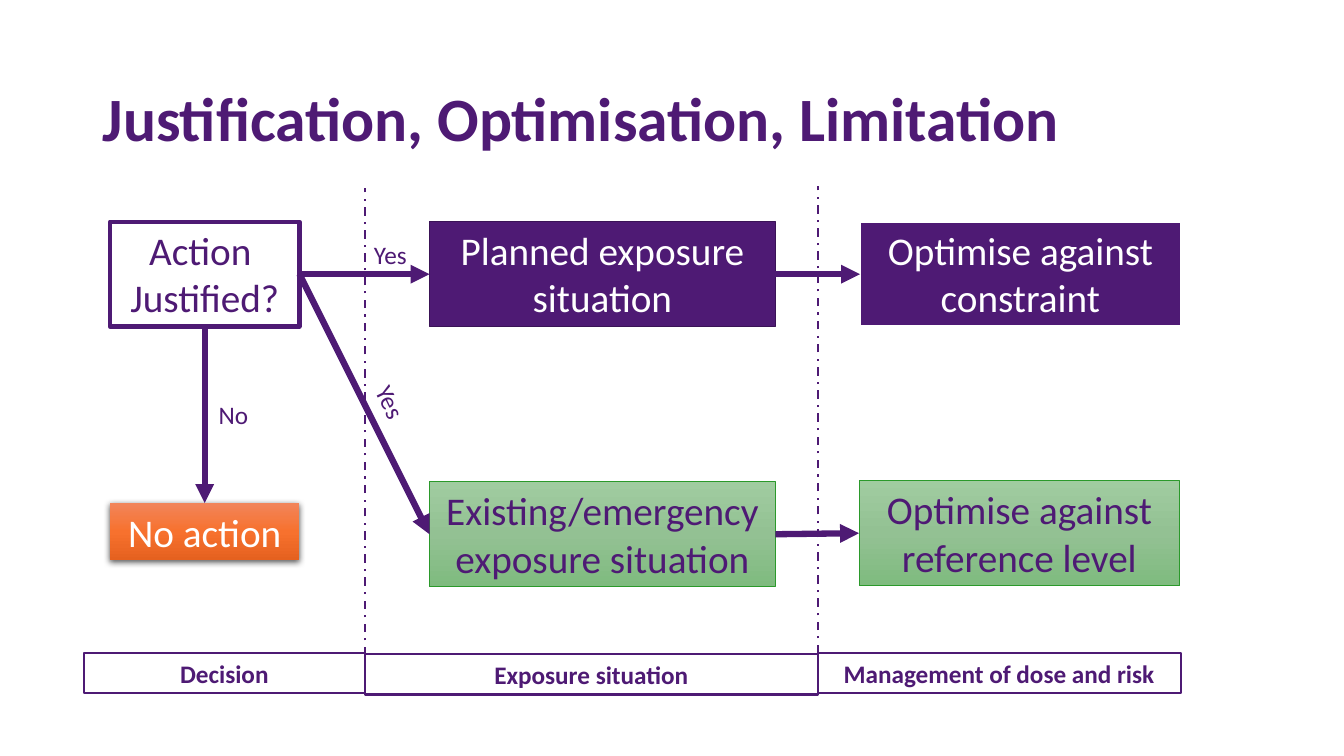
"""Build the justification, optimisation and limitation flow slide."""
import copy

import lxml.etree
import pptx
import pptx.dml.color
import pptx.enum.dml
import pptx.enum.shapes
import pptx.enum.text
import pptx.oxml.ns
import pptx.util

PX = 9144
SLIDE_SIZE = (1333, 750)
PURPLE, WHITE = "4E1A74", "FFFFFF"
GREENS = ("A0CCA0", "93C193", "7FBB7F")
ORANGES = ("F2855A", "F7712E", "E5611F")

TITLE = "Justification, Optimisation, Limitation"
TITLE_AREA = (92, 40, 1150, 145)

BOXES = {
    "action": (("Action ", "Justified?"), (109, 220, 188, 104), WHITE, (PURPLE, 3), PURPLE),
    "no_action": (("No action",), (109, 499, 188, 57), ORANGES, None, WHITE),
    "planned": (("Planned exposure situation",), (426, 220, 343, 104), PURPLE, ("3A1356", 1), WHITE),
    "constraint": (("Optimise against constraint",), (853, 220, 318, 104), PURPLE, (WHITE, 1.5), WHITE),
    "existing": (("Existing/emergency exposure situation",), (426, 478, 343, 104), GREENS, ("2B992B", 0.5), PURPLE),
    "reference": (("Optimise against reference level",), (852, 477, 318, 104), GREENS, ("2B992B", 0.5), PURPLE),
}
TOP, LEFT, BOTTOM, RIGHT = range(4)
ARROWS = [
    ("action", BOTTOM, "no_action", TOP),
    ("action", RIGHT, "planned", LEFT),
    ("planned", RIGHT, "constraint", LEFT),
    ("action", RIGHT, "existing", LEFT),
    ("existing", RIGHT, "reference", LEFT),
]
LABELS = [
    ("No", (207, 391, 54, 40), 0),
    ("Yes", (361, 233, 124, 40), 0),
    ("Yes", (341, 411, 124, 40), 64.4),
]
PHASES = [("Decision", 648), ("Exposure situation", 649), ("Management of dose and risk", 648)]
PHASE_EDGES = (83, 362, 811, 1171)
PHASE_HEIGHT = 40
DIVIDERS = [(362, 650, 187), (811, 648, 185)]


def color(value):
    return pptx.dml.color.RGBColor.from_string(value)


def emu(lengths):
    return [pptx.util.Emu(length * PX) for length in lengths]


def write(box, lines, size, ink, bold=False, centred=True, anchor="TOP", spacing=None):
    frame = box.text_frame
    frame.word_wrap = True
    frame.vertical_anchor = getattr(pptx.enum.text.MSO_ANCHOR, anchor)
    align = pptx.enum.text.PP_ALIGN.CENTER if centred else pptx.enum.text.PP_ALIGN.LEFT
    formats = {"name": "Calibri", "size": pptx.util.Pt(size), "bold": bold}
    for index, line in enumerate(lines):
        para = frame.add_paragraph() if index else frame.paragraphs[0]
        para.alignment = align
        para.line_spacing = spacing
        span = para.add_run()
        span.text = line
        for key, value in formats.items():
            setattr(span.font, key, value)
        span.font.color.rgb = color(ink)


def paint(shape, fill):
    if fill is None:
        shape.fill.background()
    elif isinstance(fill, str):
        shape.fill.solid()
        shape.fill.fore_color.rgb = color(fill)
    else:
        shape.fill.gradient()
        shape.fill.gradient_angle = 270
        stops = next(shape.element.spPr.iter(pptx.oxml.ns.qn("a:gsLst")))
        stops.append(copy.deepcopy(stops[-1]))
        for stop, value, position in zip(shape.fill.gradient_stops, fill, (0, 0.5, 1)):
            stop.color.rgb = color(value)
            stop.position = position


def outline(shape, ink, width):
    shape.line.color.rgb = color(ink)
    shape.line.width = pptx.util.Pt(width)


def add_rectangle(page, area, fill, border):
    shape = page.shapes.add_shape(pptx.enum.shapes.MSO_SHAPE.RECTANGLE, *emu(area))
    shape.shadow.inherit = False
    paint(shape, fill)
    if border:
        outline(shape, *border)
    else:
        shape.line.fill.background()
    return shape


def add_line(page, ends, width):
    line = page.shapes.add_connector(pptx.enum.shapes.MSO_CONNECTOR.STRAIGHT, *emu(ends))
    outline(line, PURPLE, width)
    lxml.etree.SubElement(line.element.spPr, pptx.oxml.ns.qn("a:effectLst"))
    return line


def add_shadow(shape):
    qn = pptx.oxml.ns.qn
    effects = shape.element.spPr.find(qn("a:effectLst"))
    shadow = lxml.etree.SubElement(effects, qn("a:outerShdw"), blurRad="57150", dist="19050",
                                   dir="5400000", algn="ctr", rotWithShape="0")
    ink = lxml.etree.SubElement(shadow, qn("a:srgbClr"), val="000000")
    lxml.etree.SubElement(ink, qn("a:alpha"), val="63000")


def add_text(page, area, lines, size, **formats):
    box = page.shapes.add_textbox(*emu(area))
    write(box, lines, size, PURPLE, centred=False, **formats)
    return box


def main():
    deck = pptx.Presentation()
    deck.slide_width, deck.slide_height = emu(SLIDE_SIZE)
    page = deck.slides.add_slide(deck.slide_layouts[6])
    add_text(page, TITLE_AREA, [TITLE], 44, bold=True, anchor="MIDDLE", spacing=1.1)

    boxes = {}
    for name, (lines, area, fill, border, ink) in BOXES.items():
        boxes[name] = add_rectangle(page, area, fill, border)
        write(boxes[name], lines, 28, ink)
    add_shadow(boxes["no_action"])

    for start, start_side, end, end_side in ARROWS:
        arrow = add_line(page, (0, 0, 0, 0), 4.5)
        arrow.begin_connect(boxes[start], start_side)
        arrow.end_connect(boxes[end], end_side)
        lxml.etree.SubElement(arrow.line._get_or_add_ln(), pptx.oxml.ns.qn("a:tailEnd"), type="triangle")

    for label, area, angle in LABELS:
        add_text(page, area, [label], 18).rotation = angle

    for x, bottom, top in DIVIDERS:
        add_line(page, (x, bottom, x, top), 1.5).line.dash_style = pptx.enum.dml.MSO_LINE.DASH_DOT

    for (phase, top), left, right in zip(PHASES, PHASE_EDGES, PHASE_EDGES[1:]):
        band = add_rectangle(page, (left, top, right - left, PHASE_HEIGHT), None, (PURPLE, 1.5))
        write(band, [phase], 18, PURPLE, bold=True)

    deck.save("out.pptx")


if __name__ == "__main__":
    main()
